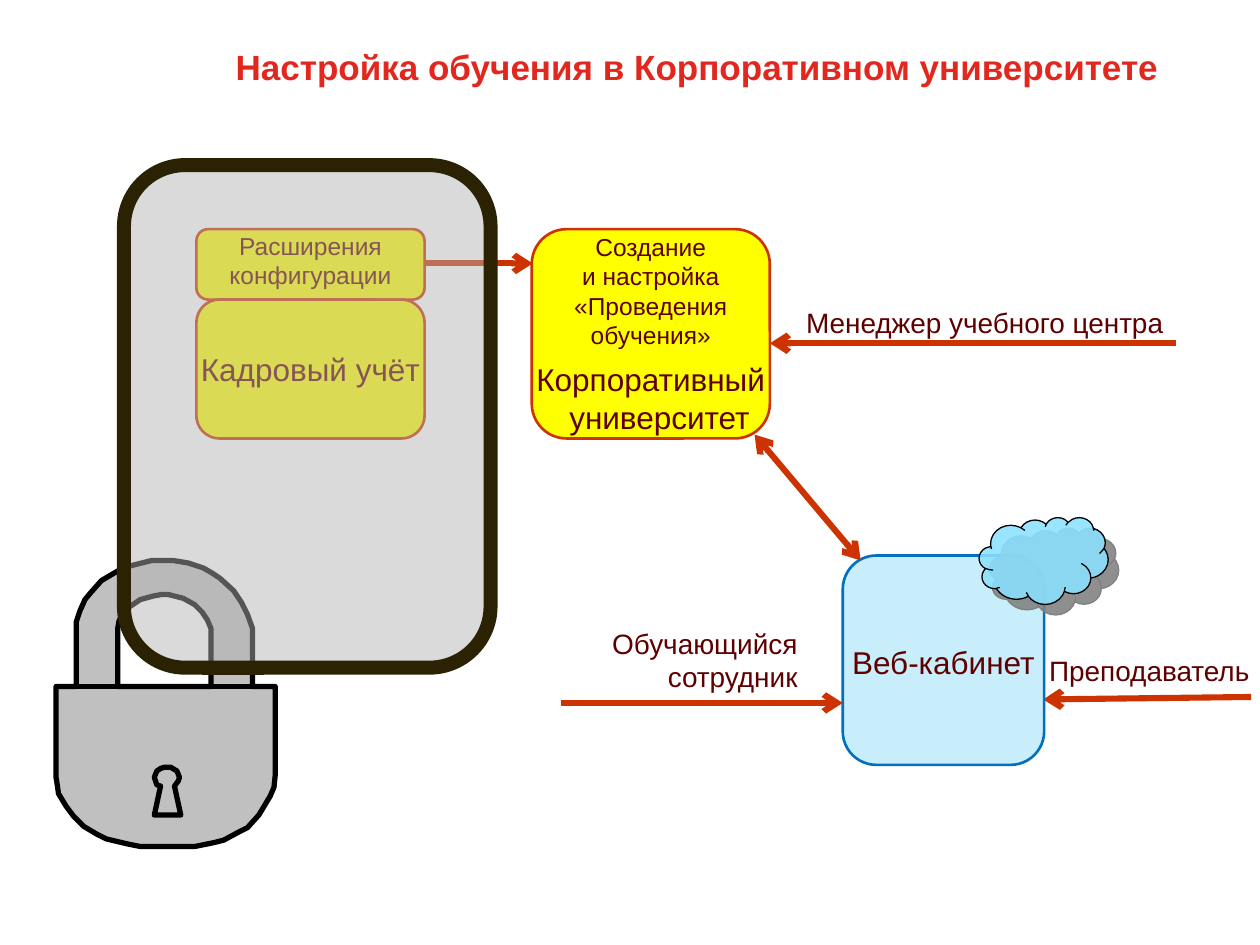
from lxml import etree
from pptx import Presentation, util as u
from pptx.dml.color import RGBColor
from pptx.enum import shapes, text
from pptx.oxml.ns import qn

RED = RGBColor(0xE2, 0x27, 0x1E)
MAROON = RGBColor(0x5F, 0x00, 0x00)
YELLOW = RGBColor(0xFF, 0xFF, 0x00)
ORANGE = RGBColor(0xCC, 0x33, 0x00)
SKY = RGBColor(0x00, 0xB0, 0xF0)
BLUE = RGBColor(0x00, 0x70, 0xC0)
CLOUD_BLUE = RGBColor(0x8B, 0xE1, 0xFF)
SHADOW = RGBColor(0x80, 0x80, 0x80)
SILVER = RGBColor(0xC0, 0xC0, 0xC0)
GRAY = RGBColor(0xB2, 0xB2, 0xB2)
UMBER = RGBColor(0x2A, 0x22, 0x03)
BLACK = RGBColor(0x00, 0x00, 0x00)

LOCK_BODY = [
    (0, 100), (16, 100), (16, 49), (19, 40), (23, 31), (28, 25), (36, 16), (41, 13),
    (53, 6), (60, 4), (76, 0), (93, 0), (105, 2), (117, 6), (124, 10), (130, 14),
    (141, 24), (147, 33), (152, 43), (156, 54), (156, 100), (174, 100), (174, 170),
    (173, 180), (170, 187), (161, 202), (152, 212), (146, 215), (133, 222), (125, 224),
    (110, 227), (67, 227), (57, 225), (40, 221), (32, 217), (22, 211), (14, 203),
    (8, 195), (2, 185), (1, 178), (0, 172),
]
LOCK_OPENING = [
    (49, 100), (49, 54), (50, 48), (53, 42), (58, 37), (67, 31), (78, 28), (84, 27),
    (89, 27), (101, 30), (110, 35), (116, 41), (120, 47), (123, 54), (123, 100),
]
KEYHOLE = [
    (94, 179), (99, 202), (78, 202), (83, 179), (80, 178), (78, 172), (80, 167),
    (83, 165), (86, 164), (91, 164), (96, 167), (98, 172), (97, 175),
]


def style_shape(shape, fill, line, width, alpha=100):
    """Set the fill, outline and opacity of a shape and drop its shadow."""
    shape.shadow.inherit = False
    shape.fill.solid()
    shape.fill.fore_color.rgb = fill
    shape.line.color.rgb = line
    shape.line.width = u.Pt(width)
    if alpha < 100:
        color = shape._element.spPr.find(qn("a:solidFill"))[0]
        etree.SubElement(color, qn("a:alpha"), val=str(alpha * 1000))


def write_lines(shape, lines, anchor=text.MSO_ANCHOR.MIDDLE, wrap=False,
                align=text.PP_ALIGN.CENTER, spacing=1.0, color=MAROON, bold=False):
    """Write one paragraph for each (wording, size, space before, indent)."""
    frame = shape.text_frame
    frame.word_wrap = wrap
    frame.vertical_anchor = anchor
    for index, (wording, size, before, indent) in enumerate(lines):
        para = frame.add_paragraph() if index else frame.paragraphs[0]
        para.alignment = align
        para.line_spacing = spacing
        if before:
            para.space_before = u.Pt(before)
        if indent:
            para._p.get_or_add_pPr().set("marL", str(u.Pt(indent)))
        span = para.add_run()
        span.text = wording
        looks = {"name": "Arial", "size": u.Pt(size), "bold": bold}
        for name, value in looks.items():
            setattr(span.font, name, value)
        span.font.color.rgb = color


def add_block(page, box, fill, line, width=1.5, alpha=100, lines=(), **looks):
    """Add a rounded block with optional wording."""
    block = page.shapes.add_shape(
        shapes.MSO_SHAPE.ROUNDED_RECTANGLE, *map(u.Cm, box))
    style_shape(block, fill, line, width, alpha)
    write_lines(block, lines, **looks)


def add_label(page, box, lines, **looks):
    """Add a plain text box."""
    write_lines(page.shapes.add_textbox(*map(u.Cm, box)), lines, **looks)


def add_line(page, ends, color=ORANGE, width=3.5, arrows=("tailEnd",)):
    """Add a straight line with open arrowheads at the named ends."""
    line = page.shapes.add_connector(
        shapes.MSO_CONNECTOR.STRAIGHT, *map(u.Cm, ends))
    line.line.color.rgb = color
    line.line.width = u.Pt(width)
    for arrow in arrows:
        etree.SubElement(line.line._get_or_add_ln(), qn(f"a:{arrow}"), type="arrow")
    etree.SubElement(line._element.spPr, qn("a:effectLst"))


def add_cloud(page, box):
    """Add the translucent cloud with its offset shadow."""
    cloud = page.shapes.add_shape(shapes.MSO_SHAPE.CLOUD, *map(u.Cm, box))
    style_shape(cloud, CLOUD_BLUE, BLACK, 0.75, 88)
    effects = cloud._element.spPr.find(qn("a:effectLst"))
    shadow = etree.SubElement(effects, qn("a:outerShdw"), dist=str(u.Pt(8.5)),
                              dir="2700000", algn="ctr", rotWithShape="0")
    etree.SubElement(shadow, qn("a:srgbClr"), val=str(SHADOW))


def add_padlock(page, box):
    """Draw the padlock body, its opening, seam and keyhole within the box."""
    left, top, width, height = box
    unit = width / 174
    for contours in ([LOCK_BODY, LOCK_OPENING], [KEYHOLE]):
        builder = page.shapes.build_freeform(*contours[0][0], scale=u.Cm(unit))
        builder.add_line_segments(contours[0][1:], close=True)
        for contour in contours[1:]:
            builder.move_to(*contour[0])
            builder.add_line_segments(contour[1:], close=True)
        style_shape(builder.convert_to_shape(u.Cm(left), u.Cm(top)), SILVER, BLACK, 3)
    seam = top + height * 100 / 227
    add_line(page, (left, seam, left + width, seam), BLACK, 3, ())


def add_university(page, box):
    """Add the university block and the extensions and payroll blocks beside it."""
    left, top, width, height = box
    side, side_width, cut = left - 6.76, 4.6, 1.42
    add_block(page, (side, top, side_width, cut), YELLOW, ORANGE,
              lines=[("Расширения", 14, 0, 0), ("конфигурации", 14, 0, 0)],
              anchor=text.MSO_ANCHOR.BOTTOM)
    add_block(page, (side, top + cut, side_width, height - cut), YELLOW, ORANGE,
              lines=[("Кадровый учёт", 18, 0, 0)])
    add_block(page, box, YELLOW, ORANGE, lines=[
        ("Создание", 14, 0, 0), ("и настройка", 14, 0, 0),
        ("«Проведения", 14, 0, 0), ("обучения»", 14, 0, 0),
        ("Корпоративный", 18, 6, 0), ("университет", 18, 0, 10)])
    add_line(page, (side + side_width, top + 0.69, left + 0.02, top + 0.69))
    right, level = left + width, top + 2.3
    add_line(page, (right + 8.18, level, right, level))
    add_label(page, (right + 0.48, level - 0.95, 8.05, 1.02),
              [("Менеджер учебного центра", 16, 0, 0)], wrap=True, spacing=1.1,
              align=text.PP_ALIGN.LEFT, anchor=text.MSO_ANCHOR.TOP)


def add_web_office(page, box):
    """Add the web office block with its cloud, users and link upward."""
    left, top, width, height = box
    right = left + width
    top_left = {"align": text.PP_ALIGN.LEFT, "anchor": text.MSO_ANCHOR.TOP}
    add_line(page, (right + 4.17, top + 2.85, right - 0.02, top + 2.9))
    add_label(page, (right - 0.15, top + 1.78, 4.6, 0.94),
              [("Преподаватель", 16, 0, 0)], spacing=1.1, **top_left)
    add_block(page, box, SKY, BLUE, alpha=21, spacing=1.1,
              lines=[("Веб-кабинет", 18, 0, 0)])
    add_cloud(page, (left + 2.75, top - 0.77, 2.6, 1.75))
    add_label(page, (left - 4.95, top + 1.3, 4.29, 1.63),
              [("Обучающийся", 16, 0, 0), ("сотрудник", 16, 0, 0)],
              align=text.PP_ALIGN.RIGHT, anchor=text.MSO_ANCHOR.TOP)
    add_line(page, (left - 5.69, top + 2.97, left, top + 2.97))
    add_line(page, (left - 1.78, top - 2.44, left + 0.36, top + 0.1),
             arrows=("headEnd", "tailEnd"))


def add_lock_panel(page, box):
    """Add the padlock and the translucent panel hanging in front of it."""
    left, top, width, height = box
    bottom = top + height
    add_padlock(page, (left - 1.37, bottom - 2.16, 4.42, 5.77))
    add_line(page, (left + 1.57, bottom, left + 2.82, bottom), UMBER, 8, ())
    add_block(page, box, GRAY, UMBER, 8, 48)


def main():
    """Build the slide and save the deck."""
    deck = Presentation()
    deck.slide_width, deck.slide_height = u.Cm(25.4), u.Cm(19.05)
    page = deck.slides.add_slide(deck.slide_layouts[6])
    add_label(page, (4.5, -0.08, 19.56, 3),
              [("Настройка обучения в Корпоративном университете", 20, 0, 0)],
              wrap=True, align=text.PP_ALIGN.LEFT, spacing=0.8, color=RED, bold=True)
    add_university(page, (10.72, 4.62, 4.8, 4.22))
    add_web_office(page, (16.99, 11.2, 4.06, 4.22))
    add_lock_panel(page, (2.5, 3.33, 7.39, 10.13))
    deck.save("out.pptx")


if __name__ == "__main__":
    main()
